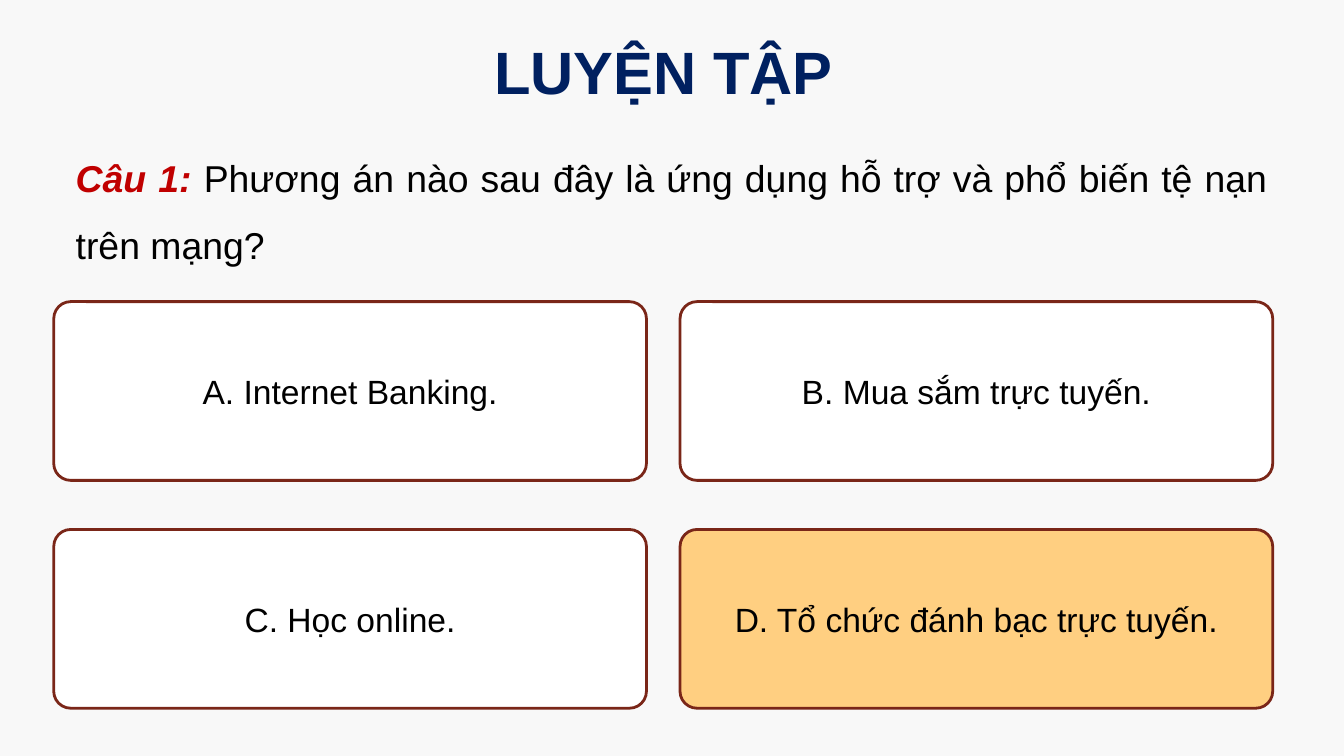
from pptx import Presentation
from pptx.dml.color import RGBColor
from pptx.enum.shapes import MSO_SHAPE
from pptx.enum.text import MSO_ANCHOR, MSO_AUTO_SIZE, PP_ALIGN
from pptx.util import Pt

PX = 4572  # EMU per px, 200 px to the inch
FONT = "Arial"
BACKGROUND = RGBColor(0xF8, 0xF8, 0xF8)
NAVY = RGBColor(0x00, 0x20, 0x60)
RED = RGBColor(0xC0, 0x00, 0x00)
BLACK = RGBColor(0x00, 0x00, 0x00)
WHITE = RGBColor(0xFF, 0xFF, 0xFF)
BROWN = RGBColor(0x7A, 0x26, 0x18)
AMBER = RGBColor(0xFF, 0xCF, 0x81)

ROUNDED = MSO_SHAPE.ROUNDED_RECTANGLE
CENTER, JUSTIFY = PP_ALIGN.CENTER, PP_ALIGN.JUSTIFY
TOP, MIDDLE = MSO_ANCHOR.TOP, MSO_ANCHOR.MIDDLE
NO_AUTOFIT = MSO_AUTO_SIZE.NONE

TITLE_ONLY_LAYOUT = 5
CARD_LEFT, CARD_TOP = 80, 449
CARD_WIDTH, CARD_HEIGHT = 882, 266
COLUMN_STEP, ROW_STEP = 932, 339
ANSWERS = [
    ("A. Internet Banking.", WHITE),
    ("B. Mua sắm trực tuyến.", WHITE),
    ("C. Học online.", WHITE),
    ("D. Tổ chức đánh bạc trực tuyến.", AMBER),
]


def px(*lengths):
    return [length * PX for length in lengths]


def prepare_text(shape, alignment, anchor):
    """Set up the text frame and return its first paragraph."""
    frame = shape.text_frame
    frame.word_wrap = True
    frame.auto_size = NO_AUTOFIT
    frame.vertical_anchor = anchor
    paragraph = frame.paragraphs[0]
    paragraph.alignment = alignment
    return paragraph


def add_run(paragraph, text, size, color, bold=False, italic=False):
    run = paragraph.add_run()
    run.text = text
    font = run.font
    font.name = FONT
    font.size = Pt(size)
    font.color.rgb = color
    font.bold = bold
    font.italic = italic


def set_title(slide):
    title = slide.shapes.title
    title.left, title.top, title.width, title.height = px(458, 42, 1083, 128)
    paragraph = prepare_text(title, CENTER, TOP)
    add_run(paragraph, "LUYỆN TẬP ", 32, NAVY, bold=True)


def add_question(slide):
    box = slide.shapes.add_textbox(*px(93, 188, 1814, 210))
    paragraph = prepare_text(box, JUSTIFY, TOP)
    paragraph.line_spacing = 1.5
    add_run(paragraph, "Câu 1: ", 20, RED, bold=True, italic=True)
    add_run(
        paragraph,
        "Phương án nào sau đây là ứng dụng hỗ trợ và phổ biến tệ nạn trên mạng?",
        20,
        BLACK,
    )


def add_answer(slide, left, top, text, fill):
    card = slide.shapes.add_shape(
        ROUNDED, *px(left, top, CARD_WIDTH, CARD_HEIGHT)
    )
    card.adjustments[0] = 0.095
    card.shadow.inherit = False
    card.fill.solid()
    card.fill.fore_color.rgb = fill
    card.line.color.rgb = BROWN
    card.line.width = Pt(1.5)
    add_run(prepare_text(card, CENTER, MIDDLE), text, 18, BLACK)


def main():
    presentation = Presentation()
    presentation.slide_width, presentation.slide_height = px(2000, 1125)
    layout = presentation.slide_layouts[TITLE_ONLY_LAYOUT]
    slide = presentation.slides.add_slide(layout)
    slide.background.fill.solid()
    slide.background.fill.fore_color.rgb = BACKGROUND

    set_title(slide)
    add_question(slide)
    for index, (text, fill) in enumerate(ANSWERS):
        row, column = divmod(index, 2)
        left = CARD_LEFT + column * COLUMN_STEP
        top = CARD_TOP + row * ROW_STEP
        add_answer(slide, left, top, text, fill)

    presentation.save("out.pptx")


if __name__ == "__main__":
    main()
